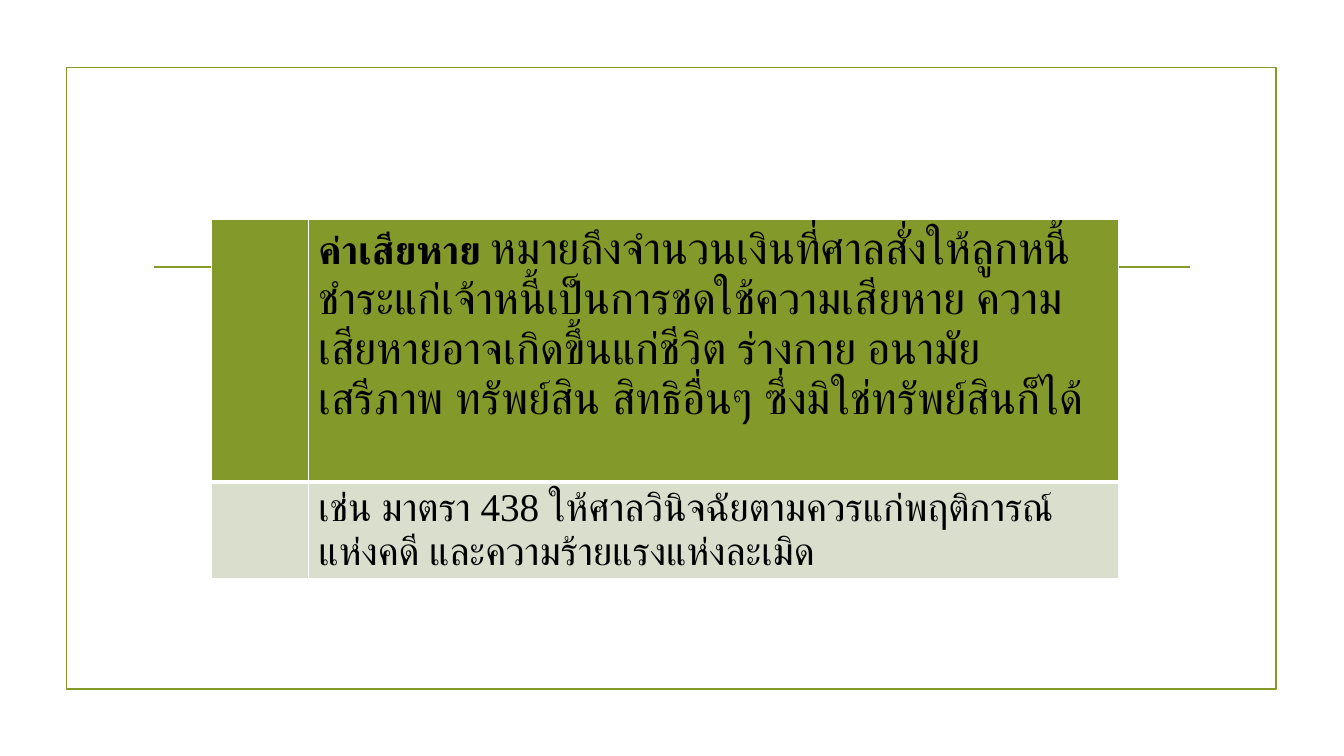
from dataclasses import dataclass

import pptx
import pptx.dml.color
import pptx.enum.lang
import pptx.enum.shapes
import pptx.oxml.ns
import pptx.oxml.xmlchemy
import pptx.util
from lxml import etree

Pt = pptx.util.Pt
qn = pptx.oxml.ns.qn
GREEN = "83992A"
PALE = "D9DECD"
WHITE = "FFFFFF"
FACE = "Times New Roman"


@dataclass
class Run:
    text: str
    size: int
    bold: bool = False


@dataclass
class Row:
    height: float
    fill: str
    base: float
    runs: list[Run]


WIDTHS = [69.1, 578.9]
ROWS = [
    Row(187.2, GREEN, 3, [
        Run("ค่าเสียหาย ", 28, True),
        Run("หมายถึงจำนวนเงินที่ศาลสั่งให้ลูกหนี้ชำระแก่เจ้าหนี้เป็นการชดใช้ความเสียหาย "
            "ความเสียหายอาจเกิดขึ้นแก่ชีวิต ร่างกาย อนามัย เสรีภาพ ทรัพย์สิน สิทธิอื่นๆ "
            "ซึ่งมิใช่ทรัพย์สินก็ได้", 32),
    ]),
    Row(29.5, PALE, 1, [
        Run("เช่น มาตรา 438 ให้ศาลวินิจฉัยตามควรแก่พฤติการณ์แห่งคดี "
            "และความร้ายแรงแห่งละเมิด", 28),
    ]),
]


def color(code: str) -> pptx.dml.color.RGBColor:
    return pptx.dml.color.RGBColor.from_string(code)


def stroke(line) -> None:
    line.color.rgb = color(GREEN)
    line.width = Pt(1.25)


def paint(cell, row: Row) -> None:
    """Fill a cell and draw its white borders."""
    props = cell._tc.get_or_add_tcPr()
    for side, width in {"L": 1, "R": 1, "T": 1, "B": row.base}.items():
        edge = etree.SubElement(props, qn(f"a:ln{side}"), w=str(Pt(width)))
        solid = etree.SubElement(edge, qn("a:solidFill"))
        etree.SubElement(solid, qn("a:srgbClr"), val=WHITE)
    cell.fill.solid()
    cell.fill.fore_color.rgb = color(row.fill)


def write(cell, runs: list[Run]) -> None:
    para = cell.text_frame.paragraphs[0]
    for item in runs:
        run = para.add_run()
        run.text = item.text
        style = {"name": FACE, "size": Pt(item.size), "bold": item.bold,
                 "language_id": pptx.enum.lang.MSO_LANGUAGE_ID.THAI}
        for key, value in style.items():
            setattr(run.font, key, value)
        run.font.color.rgb = color("000000")
        etree.SubElement(run._r.get_or_add_rPr(), qn("a:cs"), typeface=FACE)


def frame(shapes) -> None:
    box = shapes.add_shape(pptx.enum.shapes.MSO_SHAPE.RECTANGLE,
                           Pt(47.5), Pt(48.2), Pt(864), Pt(444.2))
    box.shadow.inherit = False
    box.fill.background()
    stroke(box.line)


def rule(shapes) -> None:
    line = shapes.add_connector(pptx.enum.shapes.MSO_CONNECTOR.STRAIGHT,
                                Pt(110.2), Pt(190.8), Pt(850.3), Pt(190.8))
    stroke(line.line)
    etree.SubElement(line._element.spPr, qn("a:effectLst"))


def grid(shapes) -> None:
    high = sum(row.height for row in ROWS)
    table = shapes.add_table(len(ROWS), len(WIDTHS), Pt(151.2), Pt(157),
                             Pt(sum(WIDTHS)), Pt(high)).table
    table.first_row = table.horz_banding = False
    for col, width in zip(table.columns, WIDTHS):
        col.width = Pt(width)
    for line, row in zip(table.rows, ROWS):
        line.height = Pt(row.height)
        for cell in line.cells:
            paint(cell, row)
        write(line.cells[1], row.runs)


def main() -> None:
    deck = pptx.Presentation()
    deck.slide_width, deck.slide_height = Pt(960), Pt(540)
    shapes = deck.slides.add_slide(deck.slide_layouts[6]).shapes
    frame(shapes)
    rule(shapes)
    grid(shapes)
    deck.save("out.pptx")


if __name__ == "__main__":
    main()
